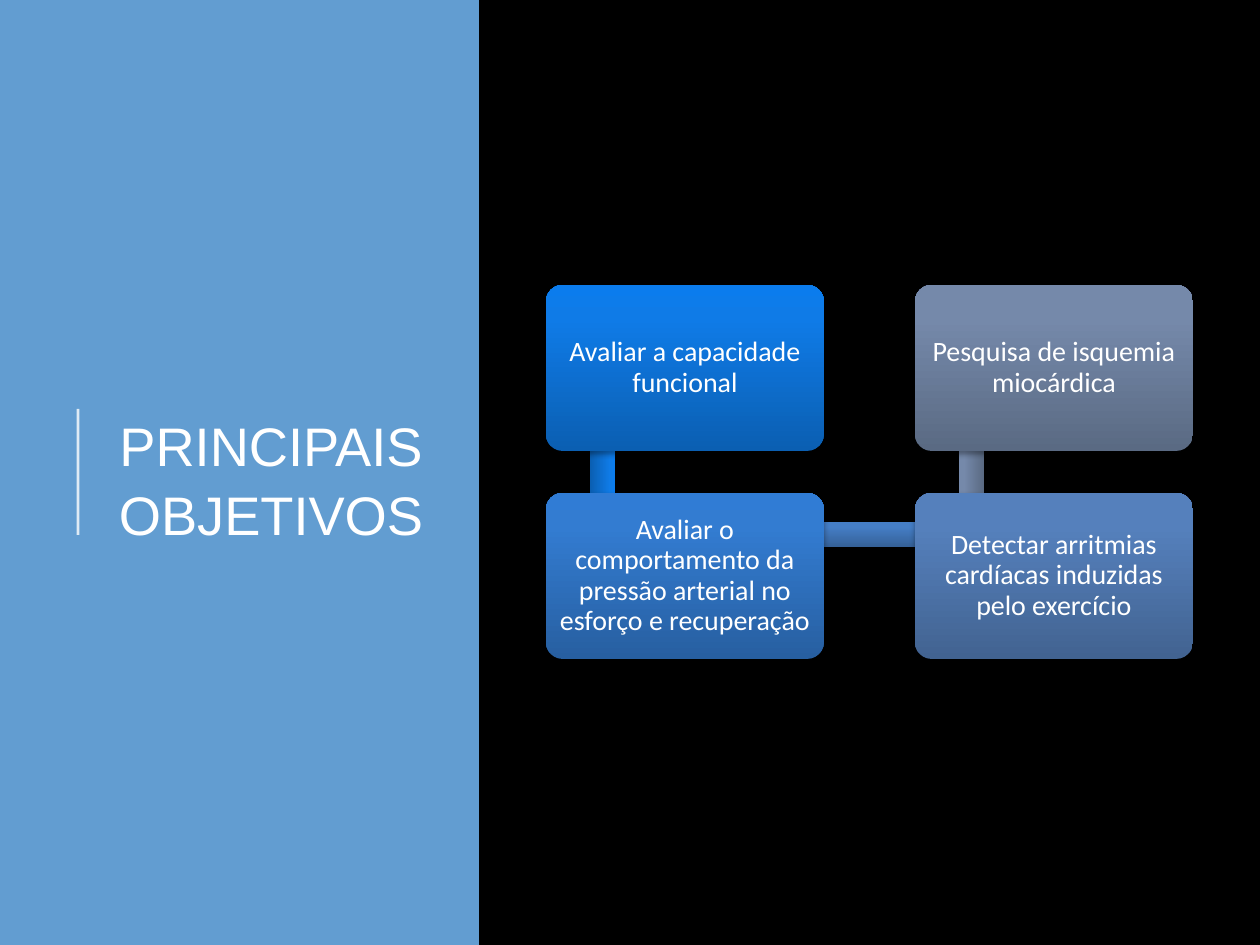
from copy import deepcopy

from lxml.etree import SubElement
from pptx import Presentation
from pptx.dml.color import RGBColor
from pptx.enum.shapes import MSO_CONNECTOR, MSO_SHAPE
from pptx.enum.text import MSO_ANCHOR, PP_ALIGN
from pptx.oxml.ns import qn
from pptx.util import Pt

PX = 914400 // 126

THEME = {
    "background": RGBColor.from_string("000000"),
    "panel": RGBColor.from_string("629DD1"),
    "text": RGBColor.from_string("FFFFFF"),
    "title": {"name": "Arial", "size": Pt(31)},
    "body": {"name": "Calibri", "size": Pt(16)},
    # Gradients run from the bottom edge to the top edge
    "blue": ("0B5FB2", "0F7BE7", "0B7CED"),
    "medium": ("275FA1", "337CD1", "307CD5"),
    "bridge": ("356198", "457EC6", "427EC9"),
    "steel": ("426391", "5580BC", "5481BF"),
    "gray": ("5A6A83", "7589AA", "748AAC"),
}
STOPS = (0, 0.8, 1)


def write_text(shape, text, font, line_spacing, margin_x, margin_y):
    frame = shape.text_frame
    settings = {
        "word_wrap": True, "vertical_anchor": MSO_ANCHOR.MIDDLE,
        "margin_left": margin_x, "margin_right": margin_x,
        "margin_top": margin_y, "margin_bottom": margin_y,
    }
    for name, value in settings.items():
        setattr(frame, name, value)
    paragraph = frame.paragraphs[0]
    paragraph.text = text
    paragraph.alignment = PP_ALIGN.CENTER
    paragraph.line_spacing = line_spacing
    for name, value in font.items():
        setattr(paragraph.font, name, value)
    paragraph.font.color.rgb = THEME["text"]


def add_gradient_shape(kind, left, top, width, height, colors):
    """Add a borderless shape with a three-stop gradient and a soft shadow."""
    shape = slide.shapes.add_shape(kind, left * PX, top * PX, width * PX, height * PX)
    shape.line.fill.background()
    shape.fill.gradient()
    shape.fill.gradient_angle = 90
    stop_list = shape.element.xpath(".//a:gsLst")[0]
    stop_list.append(deepcopy(stop_list[-1]))
    for stop, position, color in zip(shape.fill.gradient_stops, STOPS, colors):
        stop.position = position
        stop.color.rgb = RGBColor.from_string(color)

    shape.shadow.inherit = False
    effects = shape.element.spPr.find(qn("a:effectLst"))
    shadow = SubElement(effects, qn("a:outerShdw"), blurRad="40000", dist="23000",
                        dir="5400000", rotWithShape="0")
    shadow_color = SubElement(shadow, qn("a:srgbClr"), val="000000")
    SubElement(shadow_color, qn("a:alpha"), val="35000")
    return shape


presentation = Presentation()
presentation.slide_width = 1260 * PX
presentation.slide_height = 945 * PX
slide = presentation.slides.add_slide(presentation.slide_layouts[6])
slide.background.fill.solid()
slide.background.fill.fore_color.rgb = THEME["background"]

# Title panel
panel = slide.shapes.add_shape(MSO_SHAPE.RECTANGLE, 0, 0, 479 * PX, 945 * PX)
panel.fill.solid()
panel.fill.fore_color.rgb = THEME["panel"]
panel.line.fill.background()
panel.shadow.inherit = False

title = slide.shapes.add_textbox(97 * PX, 98 * PX, 348 * PX, 759 * PX)
write_text(title, "PRINCIPAIS OBJETIVOS", THEME["title"], 1.06, 13 * PX, 6 * PX)

rule = slide.shapes.add_connector(MSO_CONNECTOR.STRAIGHT, 78 * PX, 535 * PX, 78 * PX, 409 * PX)
rule.line.width = Pt(1.5)
rule.line.color.rgb = THEME["text"]
SubElement(rule.element.xpath(".//a:ln//a:srgbClr")[0], qn("a:alpha"), val="80000")
SubElement(rule.element.spPr, qn("a:effectLst"))

# Process: down the first column, across, then up the second column
LEFT, TOP, COLUMN_STEP, ROW_STEP = 546, 285, 369, 208
BOX_WIDTH, BOX_HEIGHT = 278, 166
BAR_LENGTH, BAR_WIDTH = 207, 25
BAR_LEFT, BAR_TOP = 499, 418

# Text, column, row, box gradient, outgoing bar (left, top, length, rotation, gradient)
steps = [
    ("Avaliar a capacidade funcional", 0, 0, "blue",
     (BAR_LEFT, BAR_TOP, BAR_LENGTH, 90, "blue")),
    ("Avaliar o comportamento da pressão arterial no esforço e recuperação", 0, 1, "medium",
     (604, 522, 367, 0, "bridge")),
    ("Detectar arritmias cardíacas induzidas pelo exercício", 1, 1, "steel",
     (BAR_LEFT + COLUMN_STEP, BAR_TOP, BAR_LENGTH, 270, "gray")),
    ("Pesquisa de isquemia miocárdica", 1, 0, "gray", None),
]
for text, column, row, gradient, bar in steps:
    if bar:
        bar_left, bar_top, length, rotation, bar_gradient = bar
        connector_bar = add_gradient_shape(MSO_SHAPE.RECTANGLE, bar_left, bar_top,
                                           length, BAR_WIDTH, THEME[bar_gradient])
        connector_bar.rotation = rotation
    box = add_gradient_shape(MSO_SHAPE.ROUNDED_RECTANGLE, LEFT + column * COLUMN_STEP,
                             TOP + row * ROW_STEP, BOX_WIDTH, BOX_HEIGHT, THEME[gradient])
    box.adjustments[0] = 0.1
    write_text(box, text, THEME["body"], 0.9, 8 * PX, 8 * PX)

presentation.save("out.pptx")
